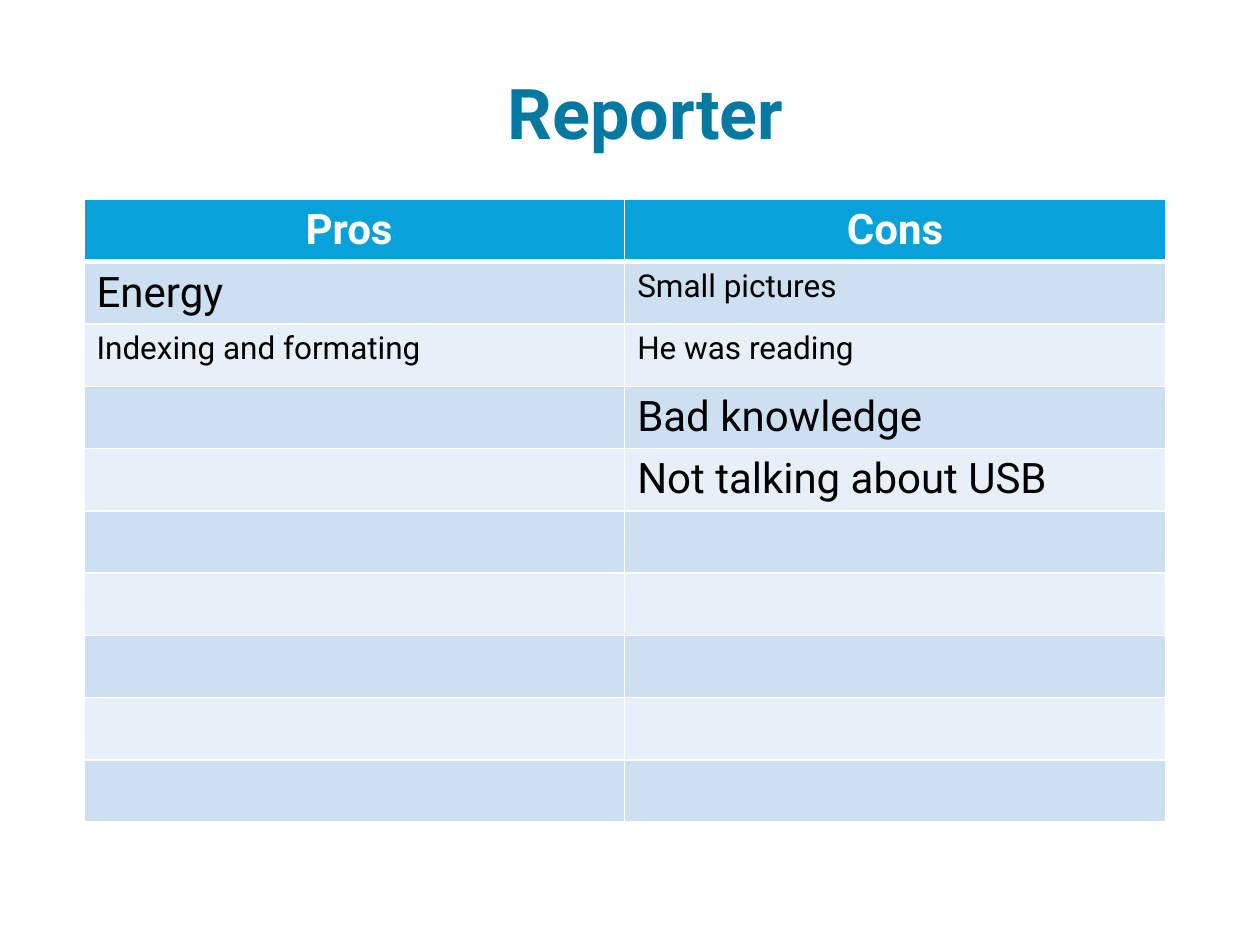
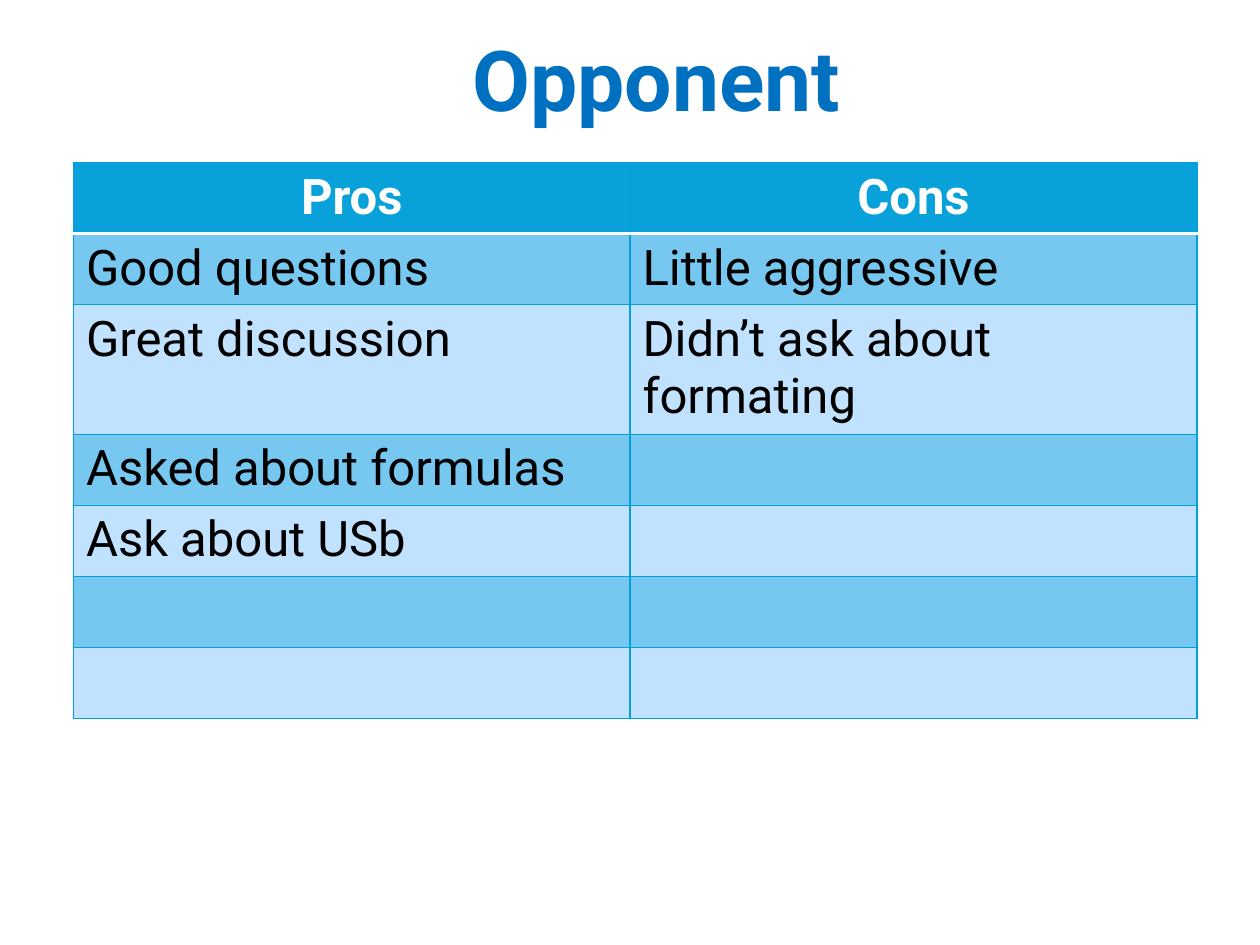
from pptx import Presentation
from pptx.dml.color import RGBColor
from pptx.enum.text import MSO_AUTO_SIZE as AutoSize, PP_ALIGN as Align
from pptx.oxml.xmlchemy import OxmlElement as Element
from pptx.util import Pt

FONT = "Roboto"
WHITE = RGBColor(0xFF, 0xFF, 0xFF)
BLACK = RGBColor(0x00, 0x00, 0x00)
HEADER = RGBColor(0x08, 0xA1, 0xD9)
GRID = RGBColor(0x03, 0xA0, 0xD9)
TEAL = RGBColor(0x06, 0x79, 0xA3)
BLUE = RGBColor(0x00, 0x70, 0xC0)
PALE_BANDS = (RGBColor(0xCC, 0xE0, 0xF1), RGBColor(0xE7, 0xF0, 0xF8))
BRIGHT_BANDS = (RGBColor(0x77, 0xC8, 0xF0), RGBColor(0xC1, 0xE2, 0xFF))


def add_run(p, text, size, color, bold=False):
    r = p.add_run()
    r.text = text
    r.font.name = FONT
    r.font.size = Pt(size)
    r.font.bold = bold
    r.font.color.rgb = color


def set_borders(cell, edges):
    """Draw the cell edges, given as (side, colour, width) in L, R, T, B order."""
    tcPr = cell._tc.get_or_add_tcPr()
    for i, (side, color, width) in enumerate(edges):
        ln = Element(f"a:ln{side}")
        ln.set("w", str(int(Pt(width))))
        fill = Element("a:solidFill")
        clr = Element("a:srgbClr")
        clr.set("val", str(color))
        fill.append(clr)
        ln.append(fill)
        tcPr.insert(i, ln)


# What differs between the two slides; a cell is text or (text, size)
slides = [
    dict(title="Reporter", title_box=(102, 36, 534, 55.5), title_size=40, title_color=TEAL,
         left=48, top=114, cols=(309, 309), heights=[35.6] * 10, size=24,
         bands=PALE_BANDS, line=(WHITE, 1), header_rule=3,
         rows=[("Pros ", "Cons"),
               ("Energy", ("Small pictures", 18)),
               (("Indexing and formating", 18), ("He was reading", 18)),
               ("", "Bad knowledge"),
               ("", "Not talking about USB")]),
    dict(title="Opponent", title_box=(114, 12, 522, 124), title_size=48, title_color=BLUE,
         left=42, top=93, cols=(318, 324), heights=[40.6] * 2 + [74] + [40.6] * 4, size=28,
         bands=BRIGHT_BANDS, line=(GRID, 0.75), header_rule=2,
         rows=[("Pros", "Cons"),
               ("Good questions", "Little aggressive"),
               ("Great discussion", "Didn’t ask about formating"),
               ("Asked about formulas", ""),
               ("Ask about USb", "")]),
]

prs = Presentation()
prs.slide_width, prs.slide_height = Pt(720), Pt(540)

for d in slides:
    s = prs.slides.add_slide(prs.slide_layouts[6])

    # Title
    sp = s.shapes.add_textbox(*map(Pt, d["title_box"]))
    tf = sp.text_frame
    tf.word_wrap = True
    tf.auto_size = AutoSize.NONE
    p = tf.paragraphs[0]
    p.alignment = Align.CENTER
    add_run(p, d["title"], d["title_size"], d["title_color"], True)

    # Table of pros and cons
    n_rows = len(d["heights"])
    tbl = s.shapes.add_table(n_rows, 2, Pt(d["left"]), Pt(d["top"]),
                             Pt(sum(d["cols"])), Pt(sum(d["heights"]))).table
    for col, width in zip(tbl.columns, d["cols"]):
        col.width = Pt(width)
    for row, height in zip(tbl.rows, d["heights"]):
        row.height = Pt(height)

    # Cells: header row, then alternating bands down to the empty rows
    rows = d["rows"] + [("", "")] * (n_rows - len(d["rows"]))
    for i, texts in enumerate(rows):
        header = i == 0
        rule = (WHITE, d["header_rule"])
        top = rule if i == 1 else d["line"]
        bottom = rule if header else d["line"]
        for j, item in enumerate(texts):
            text, size = item if isinstance(item, tuple) else (item, d["size"])
            cell = tbl.cell(i, j)
            cell.fill.solid()
            cell.fill.fore_color.rgb = HEADER if header else d["bands"][(i - 1) % 2]
            set_borders(cell, [("L", *d["line"]), ("R", *d["line"]),
                               ("T", *top), ("B", *bottom)])
            if text:
                p = cell.text_frame.paragraphs[0]
                p.alignment = Align.CENTER if header else Align.LEFT
                add_run(p, text, size, WHITE if header else BLACK, header)

prs.save("out.pptx")
